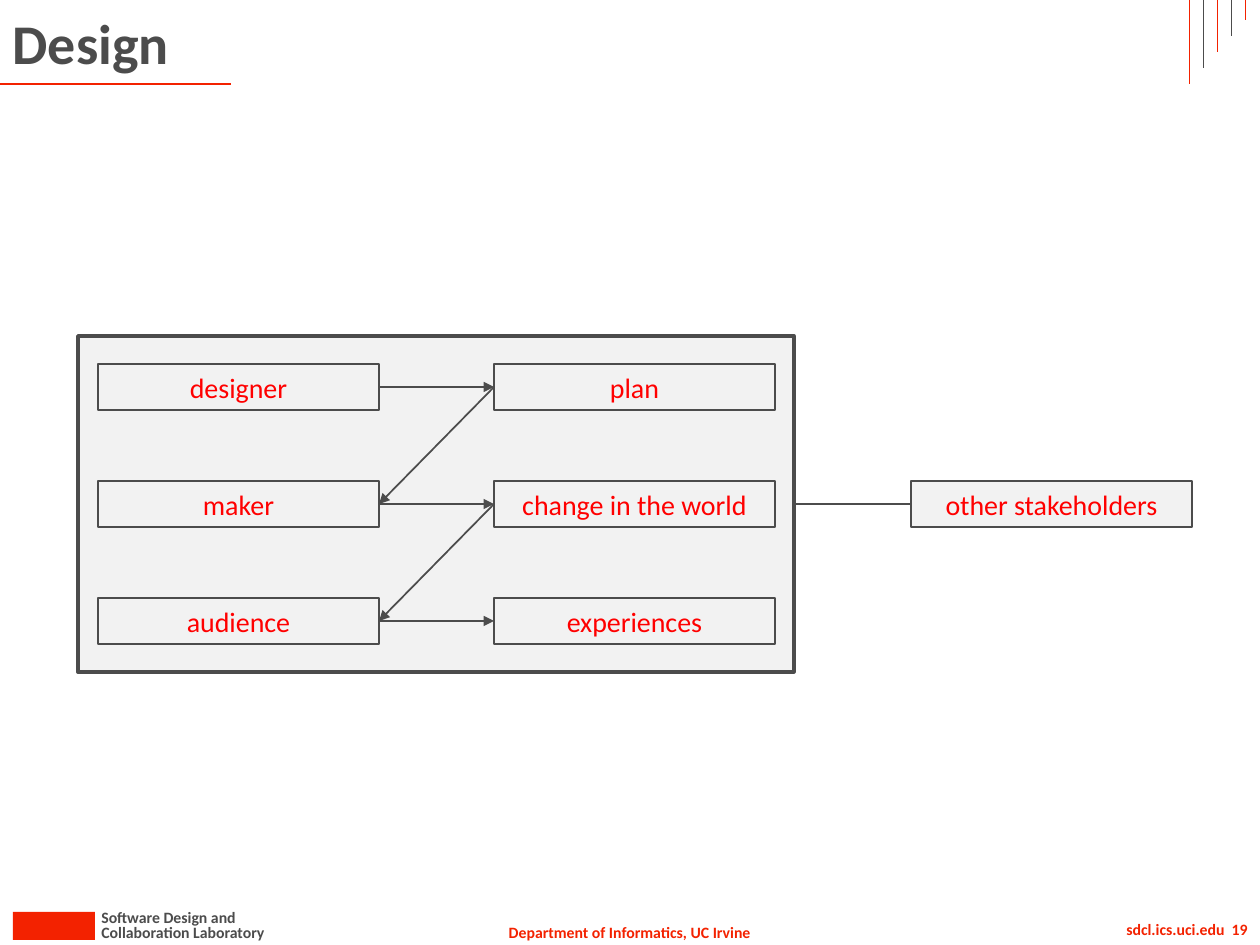
from pptx import Presentation
from pptx.dml.color import RGBColor
from pptx.enum.shapes import MSO_CONNECTOR, MSO_SHAPE
from pptx.enum.text import MSO_ANCHOR, MSO_AUTO_SIZE, PP_ALIGN
from pptx.oxml.ns import qn
from pptx.util import Emu, Pt
from lxml import etree

LEFT, CENTER, RIGHT = PP_ALIGN.LEFT, PP_ALIGN.CENTER, PP_ALIGN.RIGHT
MIDDLE = MSO_ANCHOR.MIDDLE
GROW = MSO_AUTO_SIZE.SHAPE_TO_FIT_TEXT
STRAIGHT, RECTANGLE = MSO_CONNECTOR.STRAIGHT, MSO_SHAPE.RECTANGLE

PX = 914400 / 126
GRAY, ORANGE, RED, PALE = "4C4C4C", "F32200", "FF0000", "F2F2F2"
rgb = RGBColor.from_string


def write(shape, text, size, color, bold=False, align=LEFT):
    paragraph = shape.text_frame.paragraphs[0]
    paragraph.text = text
    paragraph.alignment = align
    font = paragraph.font
    font.name, font.size, font.bold = "Calibri", Pt(size), bold
    font.color.rgb = rgb(color)


def connect(x1, y1, x2, y2, color, width, arrow=False):
    """Draw a straight line between two points given in px."""
    ends = [Emu(round(v * PX)) for v in (x1, y1, x2, y2)]
    line = slide.shapes.add_connector(STRAIGHT, *ends)
    line.line.color.rgb = rgb(color)
    line.line.width = Pt(width)
    if arrow:
        etree.SubElement(line.line._get_or_add_ln(), qn("a:tailEnd"), type="triangle")
    etree.SubElement(line._element.spPr, qn("a:effectLst"))


prs = Presentation()
prs.slide_width, prs.slide_height = Emu(round(1260 * PX)), Emu(round(945 * PX))
slide = prs.slides.add_slide(prs.slide_layouts[5])

# Footer: text, place, colour, alignment, wrapping
footer = [
    ("Department of Informatics, UC Irvine", (494, 917, 271, 32), ORANGE, CENTER, False),
    ("Collaboration Laboratory", (89, 917, 193, 32), GRAY, LEFT, False),
    ("Software Design and", (89, 902, 163, 32), GRAY, LEFT, False),
    ("sdcl.ics.uci.edu  19", (988, 914, 272, 32), ORANGE, RIGHT, True),
]
for text, place, color, align, wrap in footer:
    note = slide.shapes.add_textbox(*[Emu(round(v * PX)) for v in place])
    note.text_frame.word_wrap = wrap
    note.text_frame.auto_size = GROW
    write(note, text, 9, color, True, align)

# Plain block beside the laboratory name
badge = slide.shapes.add_shape(RECTANGLE, *[Emu(round(v * PX)) for v in (13, 912, 82, 28)])
badge.shadow.inherit = False
badge.fill.solid()
badge.fill.fore_color.rgb = rgb(ORANGE)
badge.line.fill.background()

# Title, its underline and the corner stripes
title = slide.shapes.title
title.left, title.top = Emu(0), Emu(0)
title.width, title.height = Emu(round(1134 * PX)), Emu(round(84 * PX))
title.text_frame.vertical_anchor = MIDDLE
write(title, "Design", 32, GRAY, True)

connect(0, 84, 231, 84, ORANGE, 1.5)
for i in range(5):
    stripe_x = 1189 + 14 * i
    connect(stripe_x, 84 - 16 * i, stripe_x, 0, GRAY if i % 2 else ORANGE, 0.5)

# Diagram: role column, outcome column, and the stakeholders beside the frame
ROLE_X, OUTCOME_X, STAKEHOLDER_X = 98, 494, 911
BOX_W, BOX_H = 281, 46
FRAME_X, FRAME_Y, FRAME_W, FRAME_H = 78, 336, 716, 336
ROW_Y = [387, 504, 621]
role_right = ROLE_X + BOX_W

boxes = [("", FRAME_X, FRAME_Y, FRAME_W, FRAME_H, 2)]
rows = [("designer", "plan"), ("maker", "change in the world"), ("audience", "experiences")]
for (role, outcome), y in zip(rows, ROW_Y):
    for label, x in ((role, ROLE_X), (outcome, OUTCOME_X)):
        boxes.append((label, x, y - BOX_H // 2, BOX_W, BOX_H, 1.5))
boxes.append(("other stakeholders", STAKEHOLDER_X, ROW_Y[1] - BOX_H // 2, BOX_W, BOX_H, 1.5))

for label, x, y, w, h, border in boxes:
    box = slide.shapes.add_shape(RECTANGLE, *[Emu(round(v * PX)) for v in (x, y, w, h)])
    box.shadow.inherit = False
    box.fill.solid()
    box.fill.fore_color.rgb = rgb(PALE)
    box.line.color.rgb = rgb(GRAY)
    box.line.width = Pt(border)
    if label:
        box.text_frame.word_wrap = True
        box.text_frame.auto_size = GROW
        box.text_frame.vertical_anchor = MIDDLE
        write(box, label, 16, RED, align=CENTER)

for y in ROW_Y:
    connect(role_right, y, OUTCOME_X, y, GRAY, 1, arrow=True)
for y, next_y in zip(ROW_Y, ROW_Y[1:]):
    connect(OUTCOME_X, y, role_right, next_y, GRAY, 1, arrow=True)
connect(FRAME_X + FRAME_W, ROW_Y[1], STAKEHOLDER_X, ROW_Y[1], GRAY, 1)

prs.save("out.pptx")
